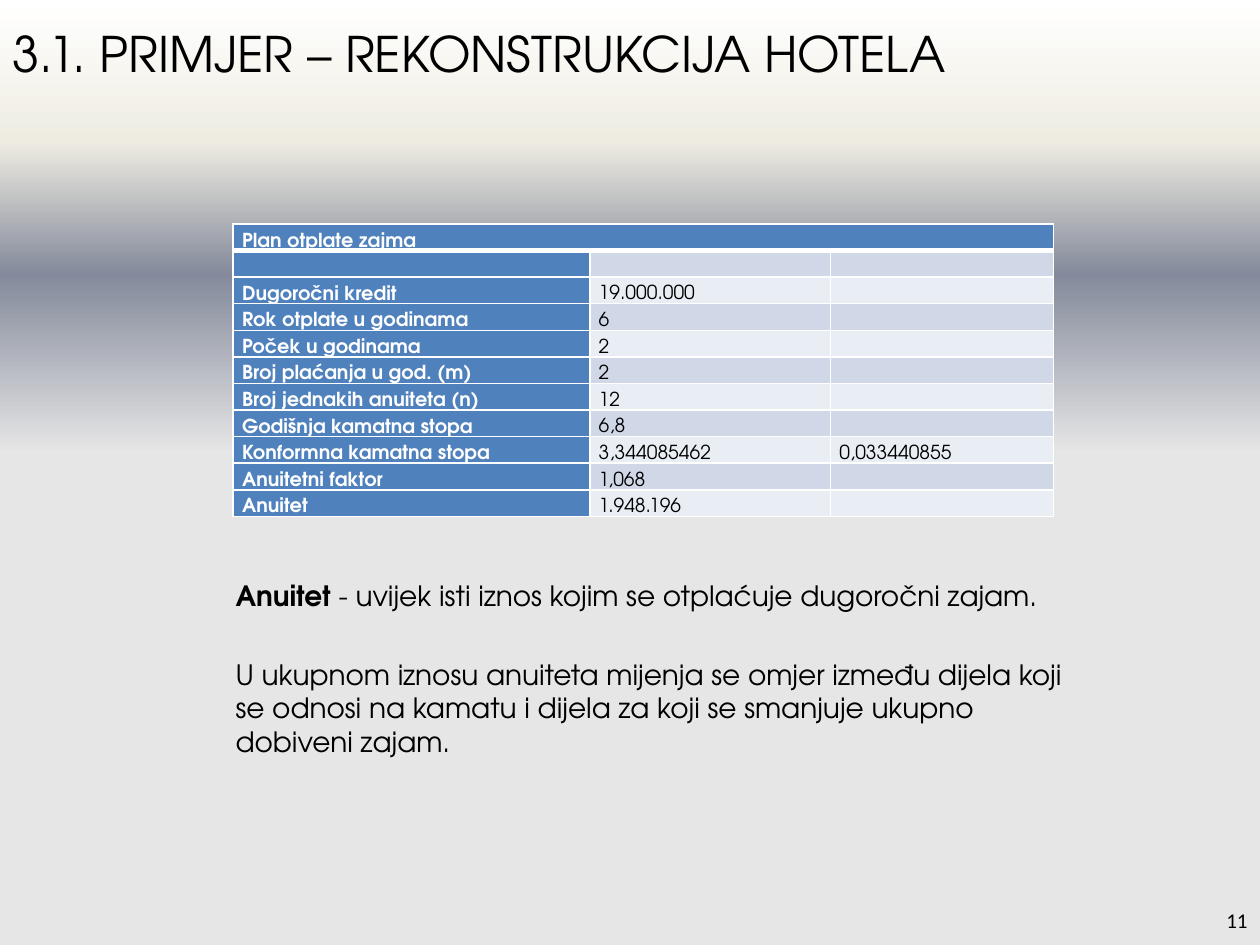
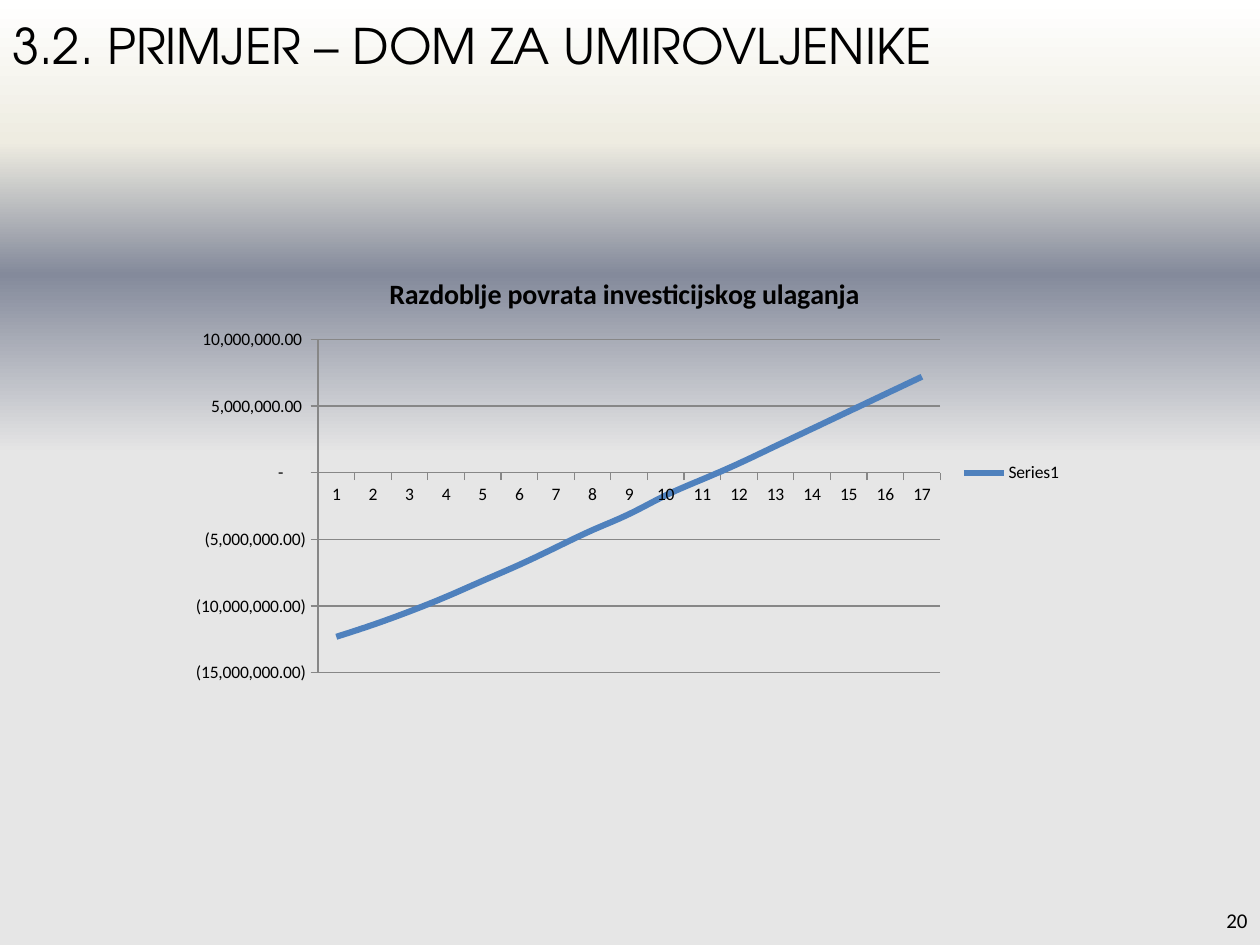
from lxml import etree
from pptx import Presentation
from pptx.chart.data import CategoryChartData
from pptx.dml.color import RGBColor
from pptx.enum import chart as charts, text
from pptx.oxml.ns import qn
from pptx.util import Cm, Pt

BLACK = RGBColor(0x00, 0x00, 0x00)
WHITE = RGBColor(0xFF, 0xFF, 0xFF)
BLUE = RGBColor(0x4F, 0x81, 0xBD)
GREY = RGBColor(0x87, 0x87, 0x87)
BANDS = (RGBColor(0xE9, 0xED, 0xF4), RGBColor(0xD0, 0xD8, 0xE8))
CREAM = RGBColor(0xEE, 0xEC, 0xE1)
SLATE = RGBColor(0x84, 0x8A, 0x9B)
PALE = RGBColor(0xE6, 0xE6, 0xE6)
BACKGROUND_STOPS = ((0, WHITE), (15, CREAM), (29, SLATE), (48, PALE), (100, PALE))
HEADING_FONT = "TeX Gyre Adventor"
PLAIN_FONT = "Calibri"


def add_run(paragraph, words, size, font=HEADING_FONT, color=BLACK, bold=False):
    run = paragraph.add_run()
    run.text = words
    run.font.name = font
    run.font.size = Pt(size)
    run.font.bold = bold
    run.font.color.rgb = color


def add_text_frame(slide, left, top, width, height, anchor=text.MSO_ANCHOR.MIDDLE):
    """Add a wrapping text box, measured in centimetres, and return its frame."""
    box = slide.shapes.add_textbox(Cm(left), Cm(top), Cm(width), Cm(height))
    box.text_frame.word_wrap = True
    box.text_frame.vertical_anchor = anchor
    return box.text_frame


presentation = Presentation()
presentation.slide_width = Cm(25.4)
presentation.slide_height = Cm(19.05)

# Shared background, page number and title
slides = []
for title, title_top, number in (
    ("3.1. PRIMJER – REKONSTRUKCIJA HOTELA", -0.53, "11"),
    ("3.2. PRIMJER – DOM ZA UMIROVLJENIKE", -0.69, "20"),
):
    slide = presentation.slides.add_slide(presentation.slide_layouts[6])
    slides.append(slide)

    background = slide.background.fill
    background.gradient()
    background.gradient_angle = 270
    stop_list = slide.element.find(".//" + qn("a:gsLst"))
    for old_stop in list(stop_list):
        stop_list.remove(old_stop)
    for position, color in BACKGROUND_STOPS:
        stop = etree.SubElement(stop_list, qn("a:gs"), pos=str(position * 1000))
        etree.SubElement(stop, qn("a:srgbClr"), val=str(color))

    paragraph = add_text_frame(slide, 24.08, 18.03, 1.32, 1.02).paragraphs[0]
    paragraph.alignment = text.PP_ALIGN.RIGHT
    add_run(paragraph, number, 12, PLAIN_FONT)

    paragraph = add_text_frame(slide, 0, title_top, 25.1, 3.18).paragraphs[0]
    add_run(paragraph, title, 28)

loan_slide, payback_slide = slides

# Loan repayment table
loan_rows = (
    ("Plan otplate zajma", "", ""),
    ("", "", ""),
    ("Dugoročni kredit", "19.000.000", ""),
    ("Rok otplate u godinama", "6", ""),
    ("Poček u godinama", "2", ""),
    ("Broj plaćanja u god. (m)", "2", ""),
    ("Broj jednakih anuiteta (n)", "12", ""),
    ("Godišnja kamatna stopa", "6,8", ""),
    ("Konformna kamatna stopa", "3,344085462", "0,033440855"),
    ("Anuitetni faktor", "1,068", ""),
    ("Anuitet", "1.948.196", ""),
)
column_widths = (7.19, 4.85, 4.5)
row_height = 0.53
table = loan_slide.shapes.add_table(
    len(loan_rows), len(column_widths), Cm(4.7), Cm(4.52),
    Cm(sum(column_widths)), Cm(row_height * len(loan_rows)),
).table
for column, width in zip(table.columns, column_widths):
    column.width = Cm(width)

for row_index, values in enumerate(loan_rows):
    table.rows[row_index].height = Cm(row_height)
    for column_index, value in enumerate(values):
        cell = table.cell(row_index, column_index)
        cell.margin_left = cell.margin_right = Cm(0.18)
        cell.margin_top = cell.margin_bottom = 0
        cell.vertical_anchor = text.MSO_ANCHOR.BOTTOM

        thick_side = {0: "lnB", 1: "lnT"}.get(row_index)
        for side in ("lnL", "lnR", "lnT", "lnB"):
            points = 3 if side == thick_side else 1
            border = etree.SubElement(
                cell._tc.get_or_add_tcPr(), qn("a:" + side), w=str(Pt(points)))
            line_fill = etree.SubElement(border, qn("a:solidFill"))
            etree.SubElement(line_fill, qn("a:srgbClr"), val=str(WHITE))

        is_heading = row_index == 0 or column_index == 0
        cell.fill.solid()
        cell.fill.fore_color.rgb = BLUE if is_heading else BANDS[row_index % 2]

        paragraph = cell.text_frame.paragraphs[0]
        if value:
            paragraph.line_spacing = 1.15
            paragraph.space_after = Pt(10)
            add_run(paragraph, value, 11, color=WHITE if is_heading else BLACK,
                    bold=is_heading)
        else:
            etree.SubElement(paragraph._p, qn("a:endParaRPr"), sz="1100")
table.cell(0, 0).merge(table.cell(0, 2))

# Explanation of the annuity
explanation = add_text_frame(loan_slide, 4.5, 11.53, 17.2, 3.99, text.MSO_ANCHOR.TOP)
paragraph = explanation.paragraphs[0]
add_run(paragraph, "Anuitet", 16, bold=True)
add_run(paragraph, " - uvijek isti iznos kojim se otplaćuje dugoročni zajam.", 16)
paragraph = explanation.add_paragraph()
paragraph.space_before = Pt(26)
add_run(paragraph, "U ukupnom iznosu anuiteta mijenja se omjer između dijela koji se odnosi "
        "na kamatu i dijela za koji se smanjuje ukupno dobiveni zajam.", 16)

# Payback period chart
balances_in_millions = (-12.3, -11.4, -10.4, -9.3, -8.1, -6.9, -5.6, -4.3, -3.1,
                        -1.7, -0.5, 0.7, 2, 3.3, 4.6, 5.9, 7.2)
chart_data = CategoryChartData()
chart_data.categories = [str(year + 1) for year in range(len(balances_in_millions))]
chart_data.add_series("Series1", [round(value * 1_000_000) for value in balances_in_millions])
chart = payback_slide.shapes.add_chart(
    charts.XL_CHART_TYPE.LINE, Cm(3.51), Cm(5.13), Cm(18.16), Cm(8.81), chart_data).chart
chart.font.name = PLAIN_FONT
chart.font.size = Pt(10)
chart.font.color.rgb = BLACK
chart.has_title = True
add_run(chart.chart_title.text_frame.paragraphs[0],
        "Razdoblje povrata investicijskog ulaganja", 16, PLAIN_FONT, bold=True)
chart.chart_title.include_in_layout = False
chart.has_legend = True
chart.legend.position = charts.XL_LEGEND_POSITION.RIGHT
chart.legend.include_in_layout = False

plot = chart.plots[0]
plot.vary_by_categories = False
series = plot.series[0]
series.smooth = True
series.marker.style = charts.XL_MARKER_STYLE.NONE
series.format.line.width = Pt(3.5)
series.format.line.color.rgb = BLUE

value_axis = chart.value_axis
value_axis.minimum_scale = -15_000_000
value_axis.maximum_scale = 10_000_000
value_axis.major_unit = 5_000_000
value_axis.has_major_gridlines = True
value_axis.major_gridlines.format.line.color.rgb = GREY
value_axis.tick_labels.number_format = (
    '_(* #,##0.00_);_(* \\(#,##0.00\\);_(* "-"??_);_(@_)')
value_axis.tick_labels.number_format_is_linked = False
for axis in (chart.category_axis, value_axis):
    axis.major_tick_mark = charts.XL_TICK_MARK.OUTSIDE
    axis.format.line.color.rgb = GREY

presentation.save("out.pptx")
